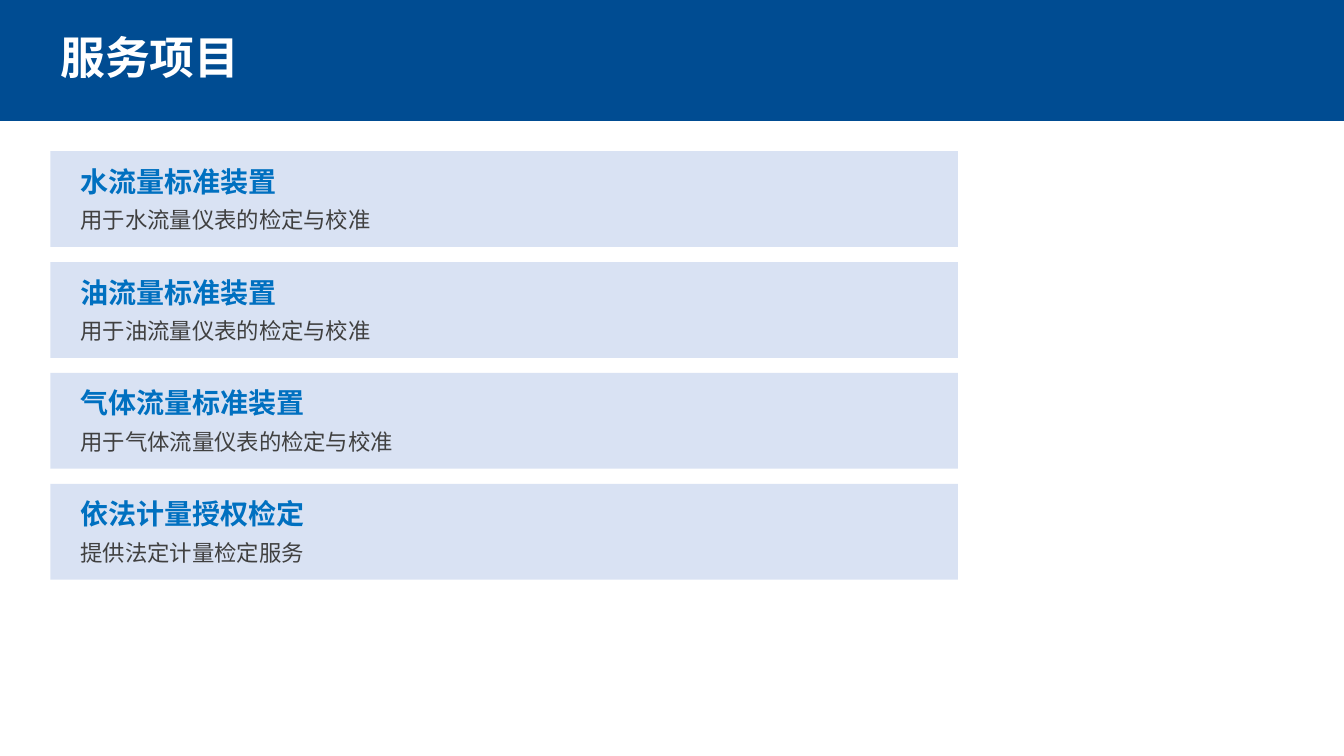
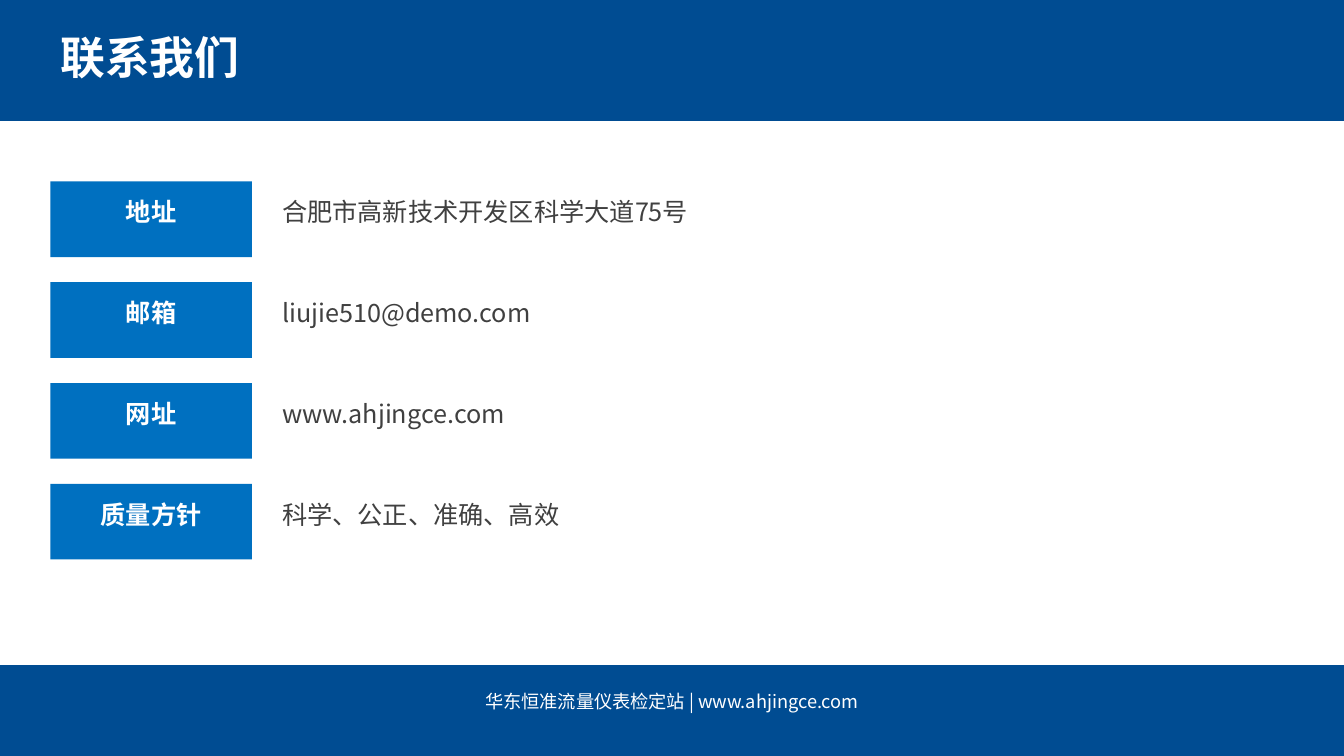
import pptx
import pptx.dml.color
import pptx.enum.shapes
import pptx.enum.text
import pptx.oxml.ns
import pptx.util
from lxml import etree

Inches = pptx.util.Inches
ALIGN = pptx.enum.text.PP_ALIGN

FONT = "Noto Sans CJK SC"
COLORS = {
    "navy": "004C92",
    "blue": "0070C0",
    "pale": "D9E2F3",
    "text": "404040",
    "white": "FFFFFF",
}
SLIDE_W, SLIDE_H = 13.33, 7.5
MARGIN = 0.5

SERVICES = [
    ("水流量标准装置", "用于水流量仪表的检定与校准"),
    ("油流量标准装置", "用于油流量仪表的检定与校准"),
    ("气体流量标准装置", "用于气体流量仪表的检定与校准"),
    ("依法计量授权检定", "提供法定计量检定服务"),
]
CONTACTS = [
    ("地址", "合肥市高新技术开发区科学大道75号"),
    ("邮箱", "liujie510@demo.com"),
    ("网址", "www.ahjingce.com"),
    ("质量方针", "科学、公正、准确、高效"),
]


def add_panel(slide, left, top, width, height, color):
    panel = slide.shapes.add_shape(
        pptx.enum.shapes.MSO_SHAPE.RECTANGLE,
        Inches(left), Inches(top), Inches(width), Inches(height))
    panel.shadow.inherit = False
    panel.fill.solid()
    panel.fill.fore_color.rgb = pptx.dml.color.RGBColor.from_string(COLORS[color])
    panel.line.fill.background()


def add_text(slide, text, left, top, width, height, *,
             size, color="text", bold=False, align=ALIGN.LEFT):
    box = slide.shapes.add_textbox(
        Inches(left), Inches(top), Inches(width), Inches(height))
    frame = box.text_frame
    frame.word_wrap = True
    frame.auto_size = pptx.enum.text.MSO_AUTO_SIZE.SHAPE_TO_FIT_TEXT
    paragraph = frame.paragraphs[0]
    paragraph.alignment = align
    run = paragraph.add_run()
    run.text = text
    run.font.name = FONT
    run.font.size = pptx.util.Pt(size)
    run.font.bold = bold
    run.font.color.rgb = pptx.dml.color.RGBColor.from_string(COLORS[color])
    # Chinese characters take their typeface from a:ea
    east_asian = etree.SubElement(run.font._element, pptx.oxml.ns.qn("a:ea"))
    east_asian.set("typeface", FONT)


deck = pptx.Presentation()
deck.slide_width = Inches(SLIDE_W)
deck.slide_height = Inches(SLIDE_H)

# Title band on every slide
pages = []
for title in ("服务项目", "联系我们"):
    page = deck.slides.add_slide(deck.slide_layouts[6])
    add_panel(page, 0, 0, SLIDE_W, 1.2, "navy")
    add_text(page, title, MARGIN, 0.25, 9, 0.64, size=32, color="white", bold=True)
    pages.append(page)
services_page, contact_page = pages

# Service cards
for row, (service, purpose) in enumerate(SERVICES):
    top = 1.5 + row * 1.1
    add_panel(services_page, MARGIN, top, 9, 0.95, "pale")
    add_text(services_page, service, 0.7, top + 0.08, 8.5, 0.44,
             size=20, color="blue", bold=True)
    add_text(services_page, purpose, 0.7, top + 0.5, 8.5, 0.37, size=16)

# Contact rows
for row, (label, detail) in enumerate(CONTACTS):
    top = 1.8 + row
    add_panel(contact_page, MARGIN, top, 2, 0.75, "blue")
    add_text(contact_page, label, MARGIN, top + 0.1, 2, 0.4,
             size=18, color="white", bold=True, align=ALIGN.CENTER)
    add_text(contact_page, detail, 2.7, top + 0.1, 6.5, 0.4, size=18)

# Closing footer
add_panel(contact_page, 0, 6.6, SLIDE_W, 0.9, "navy")
add_text(contact_page, "华东恒准流量仪表检定站 | www.ahjingce.com",
         0, 6.8, SLIDE_W, 0.32, size=13, color="white", align=ALIGN.CENTER)

deck.save("out.pptx")
